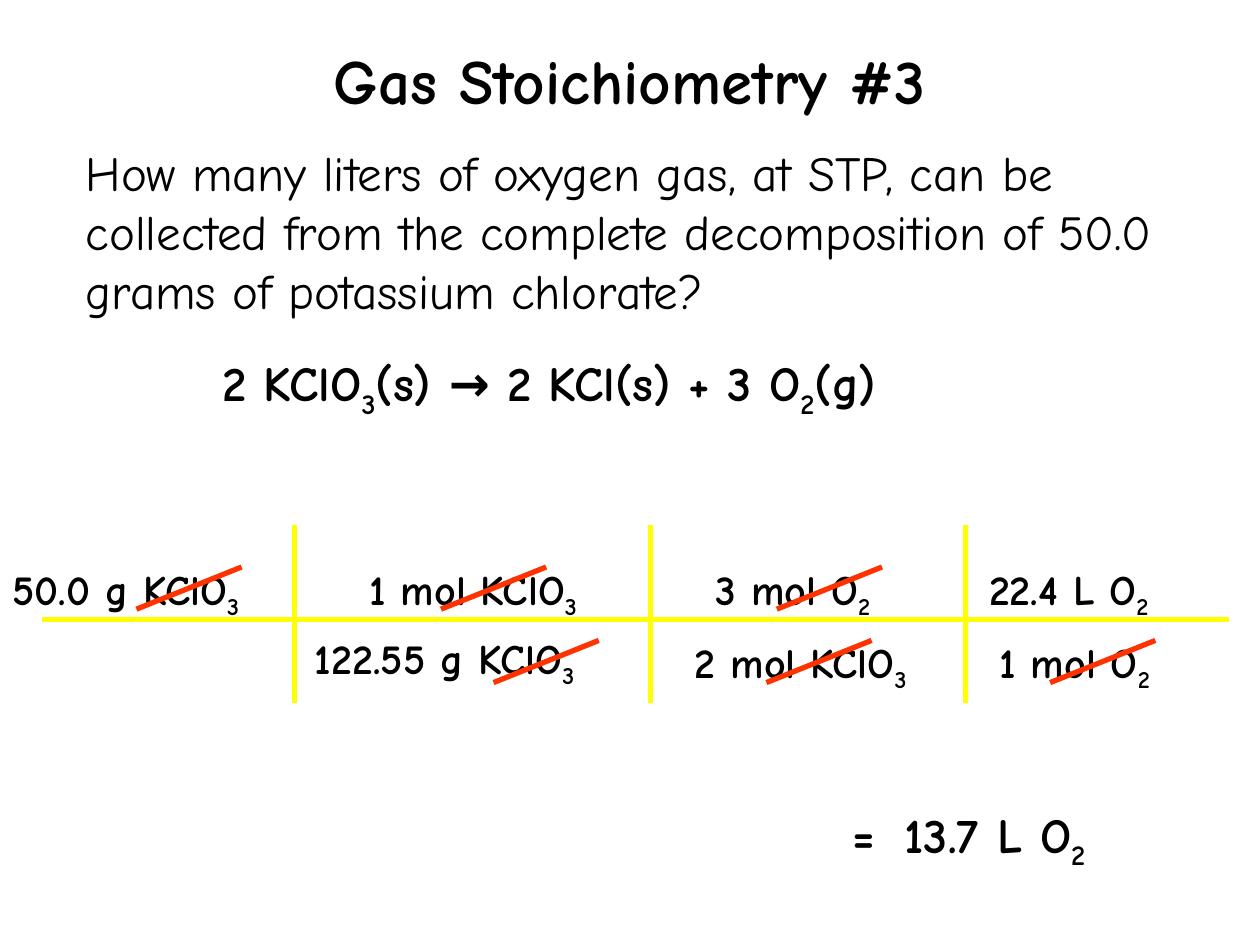
"""Build a gas stoichiometry slide with a factor-label grid."""
import pptx
import pptx.dml.color
import pptx.enum.shapes
import pptx.enum.text
import pptx.oxml
import pptx.oxml.ns
import pptx.util

Cm = pptx.util.Cm
Pt = pptx.util.Pt
ALIGN = pptx.enum.text.PP_ALIGN
ANCHOR = pptx.enum.text.MSO_ANCHOR


def rgb(value):
    return pptx.dml.color.RGBColor.from_string(value)


def write(p, text, font="Comic Neue", size=24, bold=True, color="000000"):
    for i, part in enumerate(text.split("_")):
        pieces = [(part[:1], True), (part[1:], False)] if i else [(part, False)]
        for piece, subscript in pieces:
            if not piece:
                continue
            r = p.add_run()
            r.text = piece
            r.font.name = font
            r.font.size = Pt(size)
            r.font.bold = bold
            r.font.color.rgb = rgb(color)
            if subscript:
                r.font._element.set("baseline", "-25000")


class Deck:
    grid = "FFFF00"
    strike = "FF3300"
    weight = 3

    def __init__(self, prs):
        self.s = prs.slides.add_slide(prs.slide_layouts[6])

    def text(self, x, y, w, h, text, align=ALIGN.LEFT, anchor=ANCHOR.TOP, **fmt):
        sp = self.s.shapes.add_textbox(Cm(x), Cm(y), Cm(w), Cm(h))
        tf = sp.text_frame
        tf.word_wrap = True
        tf.vertical_anchor = anchor
        p = tf.paragraphs[0]
        p.alignment = align
        write(p, text, **fmt)

    def line(self, x1, y1, x2, y2, color):
        kind = pptx.enum.shapes.MSO_CONNECTOR.STRAIGHT
        sp = self.s.shapes.add_connector(kind, Cm(x1), Cm(y1), Cm(x2), Cm(y2))
        sp.line.color.rgb = rgb(color)
        sp.line.width = Pt(self.weight)
        effects = pptx.oxml.ns.qn("a:effectLst")
        sp._element.spPr.append(sp._element.makeelement(effects, {}))

    def cancel(self, x, y):
        self.line(x, y, x + 2.12, y - 0.85, self.strike)


def main():
    prs = pptx.Presentation()
    prs.slide_width, prs.slide_height = Cm(25.4), Cm(19.05)
    deck = Deck(prs)

    deck.text(1.9, 0, 21.59, 3.18, "Gas Stoichiometry #3",
              align=ALIGN.CENTER, anchor=ANCHOR.MIDDLE, size=36)
    deck.text(1.48, 2.75, 22.9, 3.81,
              "How many liters of oxygen gas, at STP, can be collected from the "
              "complete decomposition of 50.0 grams of potassium chlorate?",
              size=28, bold=False)
    deck.text(4.23, 6.99, 16.3, 1.45, "2 KClO_3(s) → 2 KCl(s) + 3 O_2(g)", size=28)

    deck.line(0.85, 12.49, 24.77, 12.49, deck.grid)
    for x in (5.93, 13.12, 19.47):
        deck.line(x, 10.58, x, 14.18, deck.grid)

    factors = [
        (0, 11.23, 5.9, "50.0 g KClO_3"),
        (7.2, 11.23, 5.4, "1 mol KClO_3"),
        (14.18, 11.23, 4.11, "3 mol O_2"),
        (19.69, 11.23, 4.66, "22.4 L O_2"),
        (6.1, 12.62, 6.93, "122.55 g KClO_3"),
        (13.76, 12.7, 5.4, "2 mol KClO_3"),
        (19.9, 12.7, 4.11, "1 mol O_2"),
    ]
    for x, y, w, text in factors:
        deck.text(x, y, w, 1.27, text)

    for y, starts in ((12.28, (2.75, 8.89, 15.66)), (13.76, (9.95, 15.45, 21.17))):
        for x in starts:
            deck.cancel(x, y)

    for x, w, text in ((16.93, 1.2, "="), (17.99, 2.74, "13.7"), (19.86, 3.35, "L O_2")):
        deck.text(x, 16.09, w, 1.45, text, size=28)

    prs.save("out.pptx")


if __name__ == "__main__":
    main()
